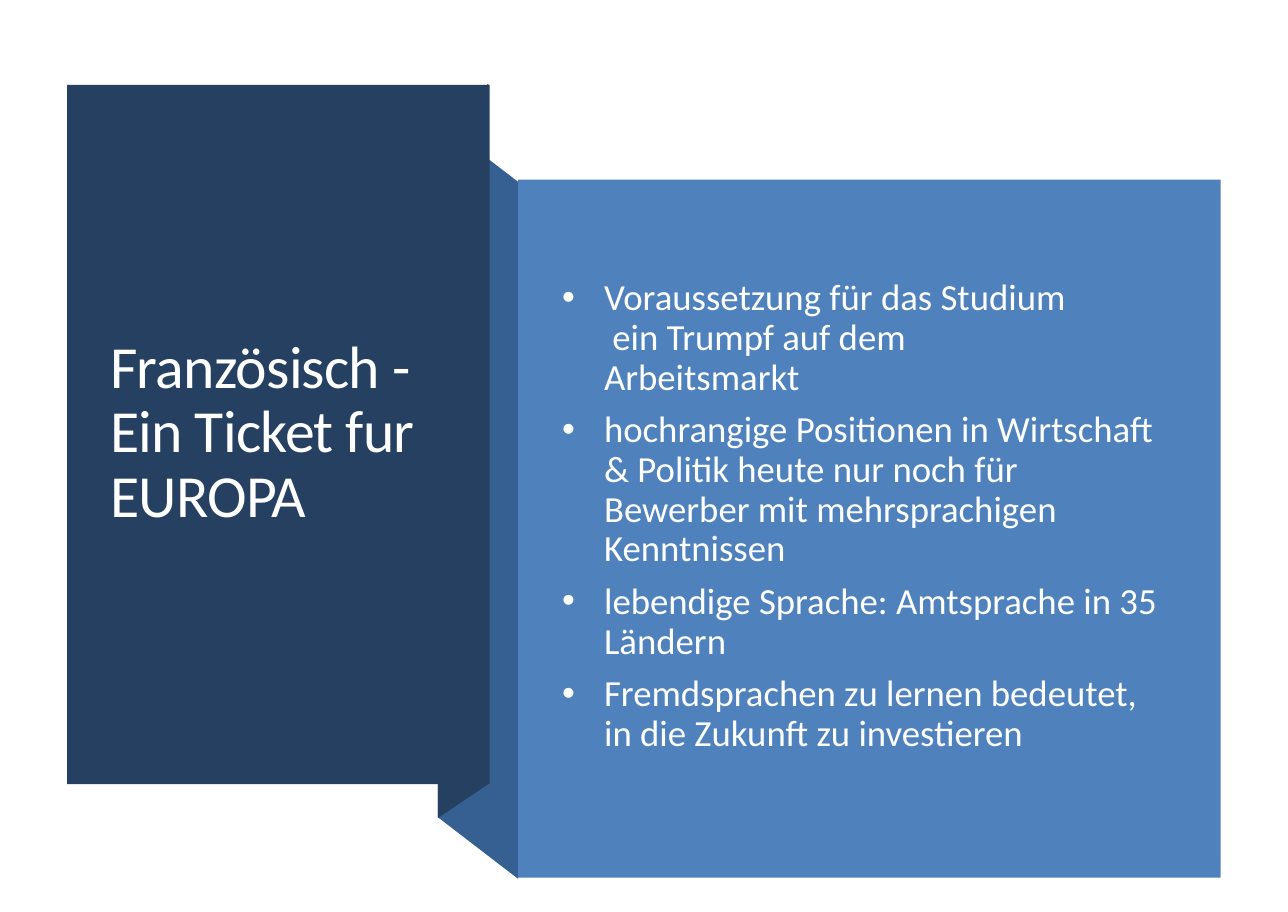
from collections import namedtuple

from lxml.etree import SubElement
from pptx import Presentation
from pptx.dml.color import RGBColor
from pptx.enum.shapes import MSO_SHAPE as Preset
from pptx.enum.text import MSO_ANCHOR as Anchor, MSO_AUTO_SIZE as AutoSize, PP_ALIGN as Align
from pptx.oxml.ns import qn
from pptx.util import Pt

PX = 9144  # EMU per px, 100 px to the inch
COLORS = {
    "navy": "254061",
    "steel": "376092",
    "blue": "4F81BD",
    "title": "FFFFFF",
    "body": "FEFFFF",
}
FONT = "Calibri"
TITLE = "Französisch - Ein Ticket fur EUROPA"
# A vertical tab is a line break inside a paragraph
BULLETS = [
    "Voraussetzung für das Studium\v ein Trumpf auf dem\vArbeitsmarkt",
    "hochrangige Positionen in Wirtschaft & Politik heute nur noch für "
    "Bewerber mit mehrsprachigen Kenntnissen",
    "lebendige Sprache: Amtsprache in 35 Ländern",
    "Fremdsprachen zu lernen bedeutet, in die Zukunft zu investieren",
]

Box = namedtuple("Box", "left top width height")


def emu(box):
    return [length * PX for length in box]


def inset(box, left, top, right, bottom):
    return Box(box.left + left, box.top + top,
               box.width - left - right, box.height - top - bottom)


def paint(shape, color):
    shape.shadow.inherit = False
    shape.fill.solid()
    shape.fill.fore_color.rgb = RGBColor.from_string(COLORS[color])
    shape.line.fill.background()


def add_panel(slide, box, color):
    paint(slide.shapes.add_shape(Preset.RECTANGLE, *emu(box)), color)


def add_outline(slide, points, color):
    builder = slide.shapes.build_freeform(*points[0], scale=PX)
    builder.add_line_segments(points[1:], close=True)
    paint(builder.convert_to_shape(), color)


def prepare_frame(frame):
    frame.word_wrap = True
    frame.auto_size = AutoSize.NONE
    frame.vertical_anchor = Anchor.MIDDLE


def style_paragraph(paragraph, size, color):
    paragraph.alignment = Align.LEFT
    paragraph.line_spacing = 0.9
    paragraph.font.name = FONT
    paragraph.font.size = Pt(size)
    paragraph.font.color.rgb = RGBColor.from_string(COLORS[color])


def add_bullet(paragraph, indent):
    properties = paragraph._p.get_or_add_pPr()
    properties.set("marL", str(indent * PX))
    properties.set("indent", str(-indent * PX))
    SubElement(properties, qn("a:buFont"), typeface="Arial")
    SubElement(properties, qn("a:buChar"), char="•")


def add_fold(slide, box):
    """Ribbon that joins the two panels."""
    left, top = box.left, box.top
    right, bottom = left + box.width, top + box.height
    # Slanted side
    add_outline(slide, [(right, bottom), (left, bottom - 56),
                        (left, top + 33), (right, top + 89)], "steel")
    # Flap behind the title panel
    add_outline(slide, [(left + 46, bottom - 86), (left, bottom - 55),
                        (left, top + 32), (left + 46, top)], "navy")


def add_title_panel(slide, box):
    add_panel(slide, box, "navy")
    title = slide.shapes.title
    title.left, title.top, title.width, title.height = emu(inset(box, 29, 41, 29, 43))
    title.text_frame.text = TITLE
    prepare_frame(title.text_frame)
    paragraph = title.text_frame.paragraphs[0]
    style_paragraph(paragraph, 39, "title")
    paragraph.runs[0].font._element.set("spc", "-50")
    # Bring the placeholder in front of its panel
    slide.shapes._spTree.append(title._element)


def add_body_panel(slide, box):
    add_panel(slide, box, "blue")
    frame = slide.shapes.add_textbox(*emu(inset(box, 30, 44, 43, 66))).text_frame
    prepare_frame(frame)
    frame.text = "\n".join(BULLETS)
    for paragraph in frame.paragraphs:
        style_paragraph(paragraph, 24, "body")
        add_bullet(paragraph, 38)
    for paragraph in frame.paragraphs[:-1]:
        paragraph.space_after = Pt(8.4)


def main():
    presentation = Presentation()
    presentation.slide_width = 1168 * PX
    presentation.slide_height = 827 * PX
    slide = presentation.slides.add_slide(presentation.slide_layouts[5])
    add_fold(slide, Box(397, 76, 73, 721))
    add_title_panel(slide, Box(61, 77, 383, 634))
    add_body_panel(slide, Box(470, 163, 637, 633))
    presentation.save("out.pptx")


if __name__ == "__main__":
    main()
